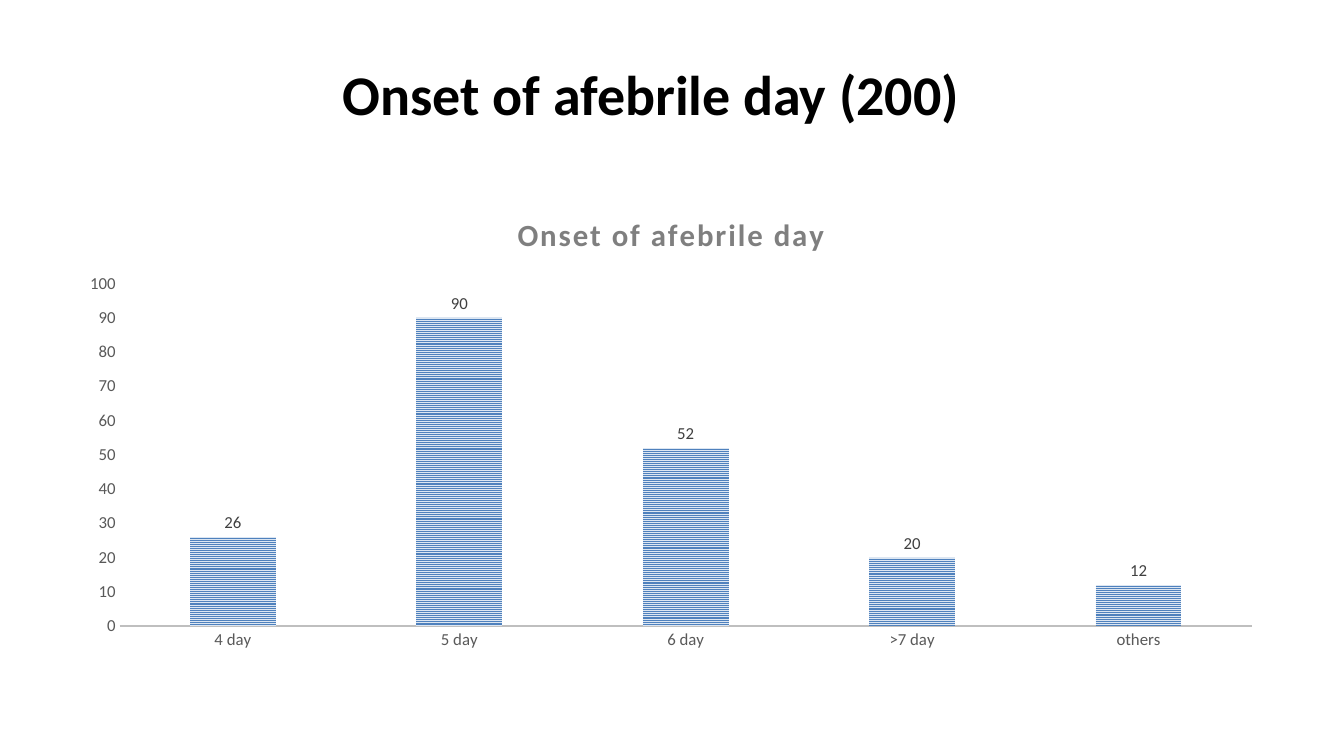
from pptx import Presentation
from pptx import util as u
from pptx.chart.data import CategoryChartData
from pptx.dml.color import RGBColor
from pptx.enum import chart as ch, dml, text

# Content
HEADING = "Onset of afebrile day (200)"
CHART_TITLE = "Onset of afebrile day"
SERIES = "Series 1"
PATIENTS = {"4 day": 26, "5 day": 90, "6 day": 52, ">7 day": 20, "others": 12}

FONT = "Calibri"
COLORS = {
    "heading": "000000", "chart title": "7F7F7F", "axis text": "595959",
    "axis line": "BFBFBF", "label": "404040", "stripe": "4F81BD",
    "stripe gap": "DCE6F2", "background": "FFFFFF",
}

# Layout in px: left, top, width, height
SLIDE_SIZE = 1344, 756
HEADING_BOX = 67, 30, 1168, 126
CHART_BOX = 66, 193, 1210, 466
PX_PER_INCH = 100.8


def px(length):
    return u.Inches(length / PX_PER_INCH)


def color(name):
    return RGBColor.from_string(COLORS[name])


def style(font, size, color_name, bold=False):
    font.name, font.size, font.bold = FONT, u.Pt(size), bold
    font.color.rgb = color(color_name)


def add_heading(slide):
    heading = slide.shapes.title
    heading.left, heading.top, heading.width, heading.height = map(px, HEADING_BOX)
    frame = heading.text_frame
    frame.text = HEADING
    frame.vertical_anchor = text.MSO_ANCHOR.MIDDLE
    paragraph = frame.paragraphs[0]
    paragraph.alignment = text.PP_ALIGN.CENTER
    style(paragraph.font, 40, "heading", bold=True)


def add_onset_chart(slide):
    data = CategoryChartData()
    data.categories = list(PATIENTS)
    data.add_series(SERIES, list(PATIENTS.values()))
    chart = slide.shapes.add_chart(
        ch.XL_CHART_TYPE.COLUMN_CLUSTERED, *map(px, CHART_BOX), data).chart
    style(chart.font, 10, "heading")
    chart.has_legend = False

    # Chart title with wide letter spacing
    chart.has_title = True
    chart.chart_title.include_in_layout = False
    title_frame = chart.chart_title.text_frame
    title_frame.text = CHART_TITLE
    title_run = title_frame.paragraphs[0].runs[0]
    style(title_run.font, 22, "chart title", bold=True)
    title_run.font._element.set("spc", "150")

    # Axes
    for axis in (chart.category_axis, chart.value_axis):
        axis.has_major_gridlines = False
        axis.major_tick_mark = axis.minor_tick_mark = ch.XL_TICK_MARK.NONE
        style(axis.tick_labels.font, 12, "axis text")
    category_line = chart.category_axis.format.line
    category_line.color.rgb = color("axis line")
    category_line.width = u.Pt(1.5)
    chart.value_axis.format.line.fill.background()
    chart.value_axis.minimum_scale = 0
    chart.value_axis.maximum_scale = 100
    chart.value_axis.major_unit = 10

    # Striped columns and their values
    plot = chart.plots[0]
    plot.gap_width, plot.overlap = 164, -22
    plot.vary_by_categories = False
    columns = plot.series[0]
    stripes = columns.format.fill
    stripes.patterned()
    stripes.pattern = dml.MSO_PATTERN.NARROW_HORIZONTAL
    stripes.fore_color.rgb = color("stripe")
    stripes.back_color.rgb = color("stripe gap")
    columns.format.line.fill.background()
    labels = columns.data_labels
    labels.show_value = True
    labels.position = ch.XL_LABEL_POSITION.OUTSIDE_END
    style(labels.font, 12, "label")


def main():
    deck = Presentation()
    deck.slide_width, deck.slide_height = map(px, SLIDE_SIZE)
    slide = deck.slides.add_slide(deck.slide_layouts.get_by_name("Title Only"))
    slide.background.fill.solid()
    slide.background.fill.fore_color.rgb = color("background")
    add_heading(slide)
    add_onset_chart(slide)
    deck.save("out.pptx")


if __name__ == "__main__":
    main()
